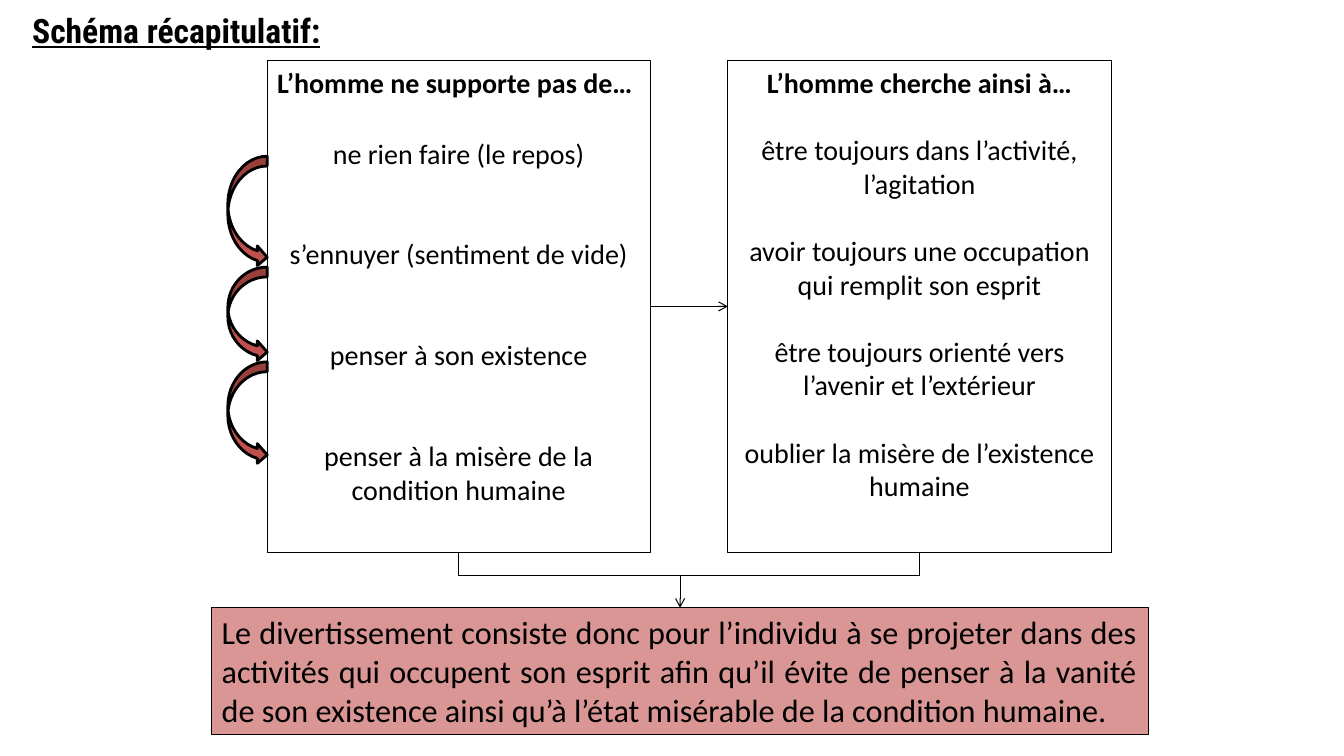
from pptx import Presentation
from pptx.dml.color import RGBColor
from pptx.enum.shapes import MSO_CONNECTOR as CONN, MSO_SHAPE as SHAPE
from pptx.enum.text import MSO_ANCHOR as ANCHOR, PP_ALIGN as ALIGN
from pptx.oxml import parse_xml
from pptx.oxml.ns import nsdecls, qn
from pptx.util import Inches, Pt

BLACK = "000000"
RED = "C0504D"
PINK = "D99694"


def rgb(color):
    return RGBColor.from_string(color)


def style_line(s, width=0.75):
    s.line.color.rgb = rgb(BLACK)
    s.line.width = Pt(width)


def add_shape(slide, kind, left, top, width, height, fill=None, line_width=0.75):
    s = slide.shapes.add_shape(kind, Inches(left), Inches(top), Inches(width), Inches(height))
    s.shadow.inherit = False
    style_line(s, line_width)
    if fill:
        s.fill.solid()
        s.fill.fore_color.rgb = rgb(fill)
    else:
        s.fill.background()
    return s


def write_paragraph(p, text, size, align=ALIGN.LEFT, font="Calibri", bold=False,
                    underline=False, before=0):
    p.text = text
    p.alignment = align
    p.space_before = Pt(before)
    f = p.runs[0].font
    f.name = font
    f.size = Pt(size)
    f.bold = bold
    f.underline = underline
    f.color.rgb = rgb(BLACK)


def prepare_frame(s):
    tf = s.text_frame
    tf.word_wrap = True
    tf.vertical_anchor = ANCHOR.TOP
    return tf


def add_column(slide, left, heading, heading_align, items, first_gap, gap):
    s = add_shape(slide, SHAPE.RECTANGLE, left, 0.6, 3.8, 4.88)
    tf = prepare_frame(s)
    write_paragraph(tf.paragraphs[0], heading, 20, heading_align, bold=True)
    for i, item in enumerate(items):
        before = gap if i else first_gap
        write_paragraph(tf.add_paragraph(), item, 20, ALIGN.CENTER, before=before)
    return s


def add_arrow(slide, x1, y1, x2, y2):
    s = slide.shapes.add_connector(CONN.STRAIGHT, x1, y1, x2, y2)
    style_line(s)
    s.line._get_or_add_ln().append(
        parse_xml(f'<a:tailEnd {nsdecls("a")} type="arrow"/>'))
    s._element.spPr.append(s._element.makeelement(qn("a:effectLst"), {}))
    return s


def add_bracket(slide, x1, x2, top, bottom):
    builder = slide.shapes.build_freeform(x1, top)
    builder.add_line_segments([(x1, bottom), (x2, bottom), (x2, top)], close=False)
    s = builder.convert_to_shape()
    s.shadow.inherit = False
    s.fill.background()
    style_line(s)


def add_title(slide, text):
    s = slide.shapes.add_textbox(Inches(0.22), Inches(0.05), Inches(5.28), Inches(0.5))
    write_paragraph(prepare_frame(s).paragraphs[0], text, 24,
                    font="Roboto Condensed", bold=True, underline=True)


def main():
    prs = Presentation()
    prs.slide_width = Inches(13.33)
    prs.slide_height = Inches(7.5)
    slide = prs.slides.add_slide(prs.slide_layouts[6])

    add_title(slide, "Schéma récapitulatif:")
    refusals = add_column(slide, 2.65, "L’homme ne supporte pas de…", ALIGN.LEFT, [
        "ne rien faire (le repos)",
        "s’ennuyer (sentiment de vide)",
        "penser à son existence",
        "penser à la misère de la condition humaine",
    ], 26.5, 48)
    pursuits = add_column(slide, 7.22, "L’homme cherche ainsi à…", ALIGN.CENTER, [
        "être toujours dans l’activité, l’agitation",
        "avoir toujours une occupation qui remplit son esprit",
        "être toujours orienté vers l’avenir et l’extérieur",
        "oublier la misère de l’existence humaine",
    ], 24, 24)

    middle = refusals.top + refusals.height // 2
    link = add_arrow(slide, refusals.left + refusals.width, middle, pursuits.left, middle)
    link.begin_connect(refusals, 3)
    link.end_connect(pursuits, 1)

    top = 1.55
    for height in (1.1, 0.94, 1.02):
        add_shape(slide, SHAPE.CURVED_RIGHT_ARROW, 2.26, top, 0.39, height, RED, 2)
        top += height

    conclusion = add_shape(slide, SHAPE.RECTANGLE, 2.1, 6.03, 9.29, 1.26, PINK)
    write_paragraph(
        prepare_frame(conclusion).paragraphs[0],
        "Le divertissement consiste donc pour l’individu à se projeter dans des activités "
        "qui occupent son esprit afin qu’il évite de penser à la vanité de son existence "
        "ainsi qu’à l’état misérable de la condition humaine.",
        23, ALIGN.JUSTIFY)

    bracket_bottom = Inches(5.71)
    add_bracket(slide, refusals.left + refusals.width // 2,
                pursuits.left + pursuits.width // 2,
                refusals.top + refusals.height, bracket_bottom)
    center = conclusion.left + conclusion.width // 2
    result = add_arrow(slide, center, bracket_bottom, center, conclusion.top)
    result.end_connect(conclusion, 0)

    prs.save("out.pptx")


if __name__ == "__main__":
    main()
